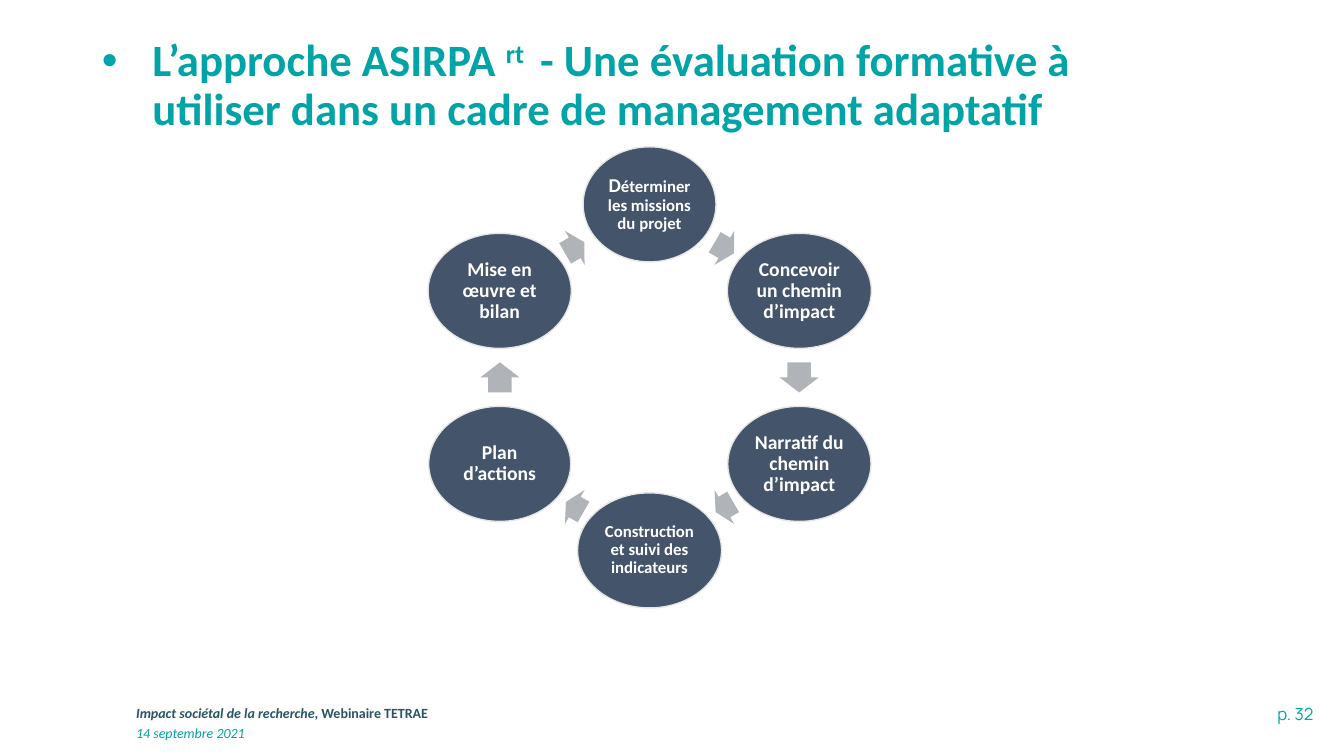
import math

from lxml import etree
from pptx import Presentation
from pptx import util as u
from pptx.dml.color import RGBColor
from pptx.enum import shapes, text
from pptx.oxml import ns

COLORS = {
    "teal": "00A3A6",
    "petrol": "275662",
    "navy": "44546A",
    "outline": "E7E6E6",
    "arrow": "B0B4B9",
    "white": "FFFFFF",
}

# Ring geometry, in centimetres
CENTER_X, CENTER_Y = 16.37, 9.51
STEP_RADIUS, ARROW_RADIUS = 4.36, 3.77
STEP_HEIGHT, ARROW_HEIGHT = 2.9, 0.99

# Clockwise from the top: ellipse width, text runs, length of the next arrow
STEPS = [
    (3.35, [("D", 14), ("éterminer les missions du projet", 12)], 0.56),
    (3.63, [("Concevoir un chemin d’impact", 14)], 0.76),
    (3.61, [("Narratif du chemin d’impact", 14)], 0.51),
    (3.63, [("Construction et suivi des indicateurs", 12)], 0.51),
    (3.58, [("Plan d’actions", 14)], 0.76),
    (3.61, [("Mise en œuvre et bilan", 14)], 0.56),
]


def rgb(name):
    return RGBColor.from_string(COLORS[name])


def add_run(para, words, size, color, bold=False, italic=False, face="Calibri"):
    span = para.add_run()
    span.text = words
    font = span.font
    font.name, font.size = face, u.Pt(size)
    font.bold, font.italic = bold, italic
    font.color.rgb = rgb(color)
    return span


def add_title(page):
    box = page.shapes.title
    box.left, box.top = u.Cm(2.57), u.Cm(0.81)
    box.width, box.height = u.Cm(27.58), u.Cm(2.74)
    frame = box.text_frame
    frame.auto_size = text.MSO_AUTO_SIZE.NONE
    frame.vertical_anchor = text.MSO_ANCHOR.MIDDLE
    frame.margin_left = 0

    # Bullet with a hanging indent
    para = frame.paragraphs[0]
    props = para._p.get_or_add_pPr()
    props.set("marL", str(u.Cm(1.27)))
    props.set("indent", str(-u.Cm(1.27)))
    etree.SubElement(props, ns.qn("a:buFont")).set("typeface", "Arial")
    etree.SubElement(props, ns.qn("a:buChar")).set("char", "•")
    para.alignment = text.PP_ALIGN.LEFT
    para.line_spacing = 0.9

    add_run(para, "L’approche ASIRPA ", 32, "teal", bold=True)
    superscript = add_run(para, "rt ", 32, "teal", bold=True)
    superscript.font._element.set("baseline", "30000")
    add_run(para, " - Une évaluation formative à utiliser dans un cadre "
            "de management adaptatif", 32, "teal", bold=True)


def add_text_line(page, left, top, width, height, align=text.PP_ALIGN.LEFT):
    box = page.shapes.add_textbox(u.Cm(left), u.Cm(top), u.Cm(width), u.Cm(height))
    box.text_frame.word_wrap = True
    para = box.text_frame.paragraphs[0]
    para.alignment = align
    return para


def add_ring_shape(page, kind, radius, degrees, width, height, fill):
    """Centre a shape on the ring, at an angle clockwise from the top."""
    angle = math.radians(degrees)
    left = CENTER_X + radius * math.sin(angle) - width / 2
    top = CENTER_Y - radius * math.cos(angle) - height / 2
    shape = page.shapes.add_shape(kind, u.Cm(left), u.Cm(top), u.Cm(width), u.Cm(height))
    shape.shadow.inherit = False
    shape.fill.solid()
    shape.fill.fore_color.rgb = rgb(fill)
    return shape


def add_step(page, degrees, width, runs):
    step = add_ring_shape(page, shapes.MSO_SHAPE.OVAL, STEP_RADIUS, degrees,
                          width, STEP_HEIGHT, "navy")
    step.line.color.rgb = rgb("outline")
    step.line.width = u.Pt(1)
    frame = step.text_frame
    frame.word_wrap = True
    frame.vertical_anchor = text.MSO_ANCHOR.MIDDLE
    frame.margin_left = frame.margin_right = u.Cm(0.05)
    frame.margin_top = frame.margin_bottom = u.Cm(0.05)
    para = frame.paragraphs[0]
    para.alignment = text.PP_ALIGN.CENTER
    para.line_spacing = 0.9
    for words, size in runs:
        add_run(para, words, size, "white", bold=True)


def add_arrow(page, degrees, length):
    arrow = add_ring_shape(page, shapes.MSO_SHAPE.RIGHT_ARROW, ARROW_RADIUS, degrees,
                           length, ARROW_HEIGHT, "arrow")
    arrow.line.fill.background()
    arrow.adjustments[0] = 0.6
    arrow.adjustments[1] = 0.5
    arrow.rotation = degrees


def main():
    deck = Presentation()
    deck.slide_width, deck.slide_height = u.Cm(33.87), u.Cm(19.05)
    page = deck.slides.add_slide(deck.slide_layouts[5])

    add_title(page)

    # Cycle of steps, each followed by an arrow
    sector = 360 / len(STEPS)
    for index, (width, runs, arrow_length) in enumerate(STEPS):
        add_step(page, index * sector, width, runs)
        add_arrow(page, (index + 0.5) * sector, arrow_length)

    # Footer
    event = add_text_line(page, 3.18, 17.63, 18.64, 0.69)
    add_run(event, "Impact sociétal de la recherche", 10, "petrol", bold=True, italic=True)
    add_run(event, ", Webinaire TETRAE", 10, "petrol", bold=True)
    date = add_text_line(page, 3.18, 18.14, 18.64, 0.69)
    add_run(date, "14 septembre 2021", 10, "teal", italic=True)
    number = add_text_line(page, 27.56, 17.6, 5.79, 0.76, text.PP_ALIGN.RIGHT)
    add_run(number, "p. 32", 12, "teal", face="Manrope")

    deck.save("out.pptx")


if __name__ == "__main__":
    main()
